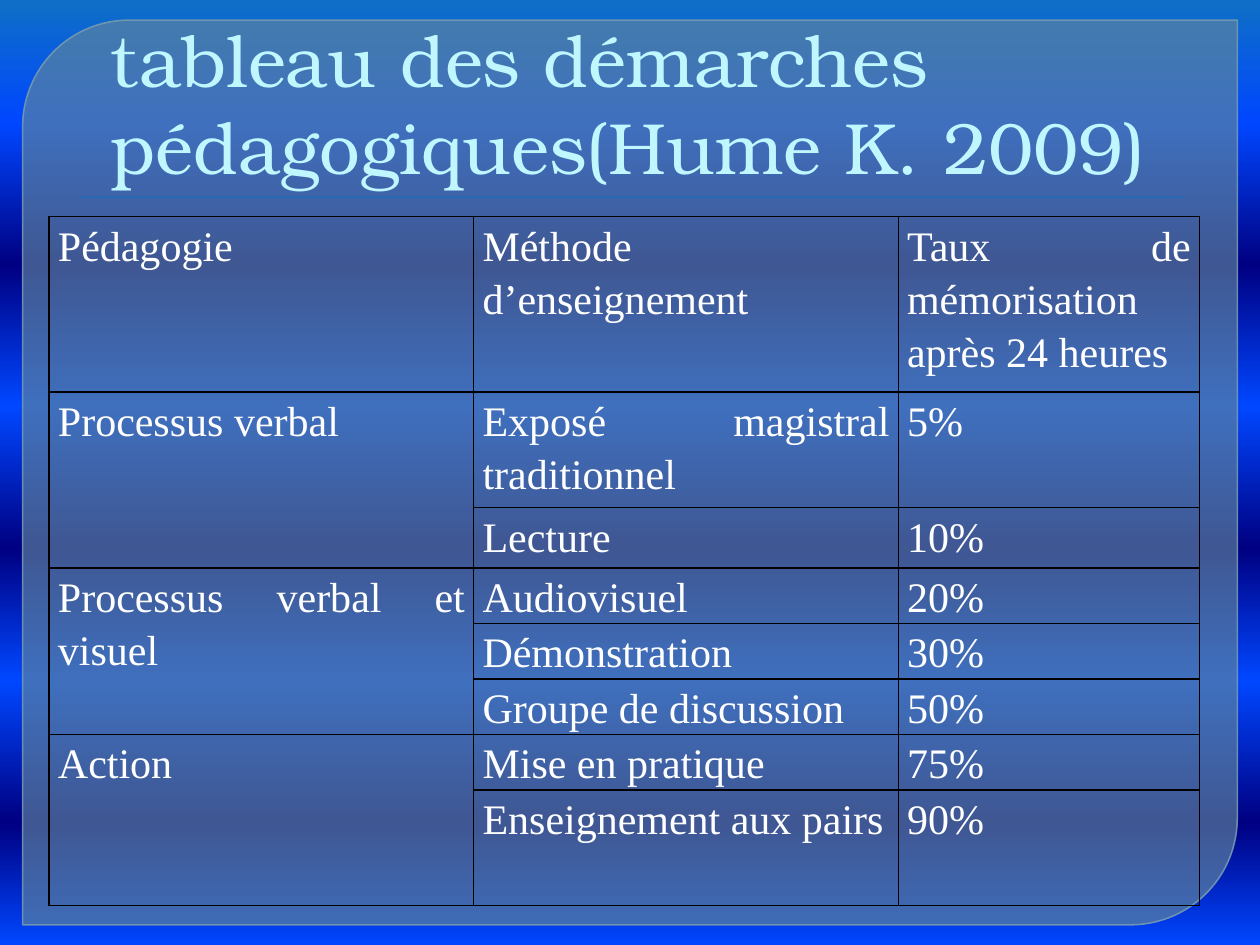
"""Build a slide with a table of teaching approaches and retention rates."""
from dataclasses import dataclass

from lxml import etree
from pptx import Presentation
from pptx.dml.color import RGBColor
from pptx.enum.shapes import MSO_SHAPE
from pptx.enum.text import MSO_ANCHOR, MSO_AUTO_SIZE, PP_ALIGN
from pptx.oxml.ns import qn
from pptx.util import Inches, Pt

PANEL_SHAPE = MSO_SHAPE.ROUND_2_DIAG_RECTANGLE
RECT = MSO_SHAPE.RECTANGLE
BOTTOM = MSO_ANCHOR.BOTTOM
NO_FIT = MSO_AUTO_SIZE.NONE
LEFT, JUSTIFY = PP_ALIGN.LEFT, PP_ALIGN.JUSTIFY

BLUE = RGBColor(0x0F, 0x6F, 0xC6)
BRIGHT = RGBColor(0x00, 0x47, 0xFF)
NAVY = RGBColor(0x00, 0x00, 0x82)
PANEL = RGBColor(0x61, 0x86, 0x9C)
PANEL_LINE = RGBColor(0x77, 0x9B, 0xB2)
TITLE = RGBColor(0xC0, 0xF7, 0xFF)
WHITE = RGBColor(0xFF, 0xFF, 0xFF)
BLACK = RGBColor(0x00, 0x00, 0x00)

STOPS = [(0, BLUE), (13, BRIGHT), (28, NAVY), (43, BRIGHT),
         (58, NAVY), (72, BRIGHT), (87, NAVY), (100, BRIGHT)]
COLS = [3.37, 3.37, 2.39]
HEADER_HEIGHT = 1.39
HEADERS = ["Pédagogie", "Méthode d’enseignement",
           "Taux de mémorisation\naprès 24 heures"]


@dataclass
class Method:
    name: str
    rate: str
    height: float = 0.44


@dataclass
class Approach:
    name: str
    methods: list[Method]


APPROACHES = [
    Approach("Processus verbal", [
        Method("Exposé magistral traditionnel", "5%", 0.92),
        Method("Lecture", "10%", 0.48)]),
    Approach("Processus verbal et visuel", [
        Method("Audiovisuel", "20%"),
        Method("Démonstration", "30%"),
        Method("Groupe de discussion", "50%")]),
    Approach("Action", [
        Method("Mise en pratique", "75%"),
        Method("Enseignement aux pairs", "90%", 0.92)]),
]


def add_color(parent, color: RGBColor, alpha: int = 100) -> None:
    """Append an RGB colour with an opacity in percent."""
    clr = etree.SubElement(parent, qn("a:srgbClr"), val=str(color))
    if alpha < 100:
        etree.SubElement(clr, qn("a:alpha"), val=str(alpha * 1000))


def set_background(s) -> None:
    """Fill the background with the banded vertical gradient."""
    fill = s.background.fill
    fill.gradient()
    fill.gradient_angle = 270
    stops = s.element.find(".//" + qn("a:gsLst"))
    for gs in list(stops):
        stops.remove(gs)
    for pos, color in STOPS:
        gs = etree.SubElement(stops, qn("a:gs"), pos=str(pos * 1000))
        add_color(gs, color)


def set_alpha(fill_xml, color: RGBColor, alpha: int) -> None:
    """Replace the colour of a solid fill with a translucent one."""
    fill_xml.remove(fill_xml[0])
    add_color(fill_xml, color, alpha)


def add_panel(s) -> None:
    """Draw the translucent panel behind the content."""
    sp = s.shapes.add_shape(PANEL_SHAPE, Inches(0.18), Inches(0.16),
                            Inches(9.64), Inches(7.18))
    sp.adjustments[0], sp.adjustments[1] = 0.118, 0
    sp.shadow.inherit = False
    sp.fill.solid()
    sp.fill.fore_color.rgb = PANEL
    sp.line.color.rgb = PANEL_LINE
    sp.line.width = Pt(0.87)
    props = sp.element.spPr
    set_alpha(props.find(qn("a:solidFill")), PANEL, 65)
    set_alpha(props.find(qn("a:ln") + "/" + qn("a:solidFill")), PANEL_LINE, 88)


def add_rule(s) -> None:
    """Draw the thin shadowed rule under the title."""
    sp = s.shapes.add_shape(RECT, Inches(0.64), Inches(1.56),
                            Inches(8.75), Inches(0.01))
    sp.fill.solid()
    sp.fill.fore_color.rgb = BLUE
    sp.line.fill.background()
    sp.shadow.inherit = False
    effects = sp.element.spPr.find(qn("a:effectLst"))
    shadow = etree.SubElement(effects, qn("a:outerShdw"), blurRad=str(Pt(1)),
                              dist=str(Pt(1)), dir="5400000")
    add_color(shadow, BLACK, 75)


def set_title(s, text: str) -> None:
    """Place and format the title in front of the panel."""
    sp = s.shapes.title
    sp.element.getparent().append(sp.element)
    sp.left, sp.top = Inches(0.72), Inches(0.61)
    sp.width, sp.height = Inches(9), Inches(0.94)
    tf = sp.text_frame
    tf.text = text
    tf.word_wrap = True
    tf.auto_size = NO_FIT
    tf.vertical_anchor = BOTTOM
    p = tf.paragraphs[0]
    p.alignment = LEFT
    p._p.get_or_add_pPr().set("marL", str(Inches(0.06)))
    font = p.runs[0].font
    font.name, font.size, font.bold = "TeX Gyre Bonum", Pt(41.4), False
    font.color.rgb = TITLE


def format_cell(cell) -> None:
    """Give a cell its clear fill, margins, black borders and text style."""
    cell.fill.background()
    cell.margin_left = cell.margin_right = Inches(0.07)
    cell.margin_top = cell.margin_bottom = 0
    props = cell._tc.get_or_add_tcPr()
    for i, side in enumerate(("a:lnL", "a:lnR", "a:lnT", "a:lnB")):
        ln = etree.Element(qn(side), w=str(Pt(1)))
        add_color(etree.SubElement(ln, qn("a:solidFill")), BLACK)
        props.insert(i, ln)
    for p in cell.text_frame.paragraphs:
        p.alignment, p.line_spacing = JUSTIFY, 1.15
        for r in p.runs:
            r.font.name, r.font.size = "Times New Roman", Pt(24)
            r.font.color.rgb = WHITE


def add_methods_table(s) -> None:
    """Add the table, merging each approach over its methods."""
    heights = [HEADER_HEIGHT] + [m.height for a in APPROACHES for m in a.methods]
    frame = s.shapes.add_table(len(heights), len(COLS), Inches(0.39), Inches(1.72),
                               Inches(sum(COLS)), Inches(sum(heights)))
    table = frame.table
    table.first_row = table.horz_banding = False
    for col, width in zip(table.columns, COLS):
        col.width = Inches(width)
    for row, height in zip(table.rows, heights):
        row.height = Inches(height)
    for i, text in enumerate(HEADERS):
        table.cell(0, i).text = text
    row = 1
    for approach in APPROACHES:
        first = table.cell(row, 0)
        first.text = approach.name
        first.merge(table.cell(row + len(approach.methods) - 1, 0))
        for method in approach.methods:
            table.cell(row, 1).text = method.name
            table.cell(row, 2).text = method.rate
            row += 1
    for cell in table.iter_cells():
        format_cell(cell)


def main() -> None:
    """Build and save the slide."""
    prs = Presentation()
    prs.slide_width, prs.slide_height = Inches(10), Inches(7.5)
    s = prs.slides.add_slide(prs.slide_layouts[5])
    set_background(s)
    add_panel(s)
    add_rule(s)
    set_title(s, "tableau des démarches pédagogiques(Hume K. 2009)")
    add_methods_table(s)
    prs.save("out.pptx")


if __name__ == "__main__":
    main()
